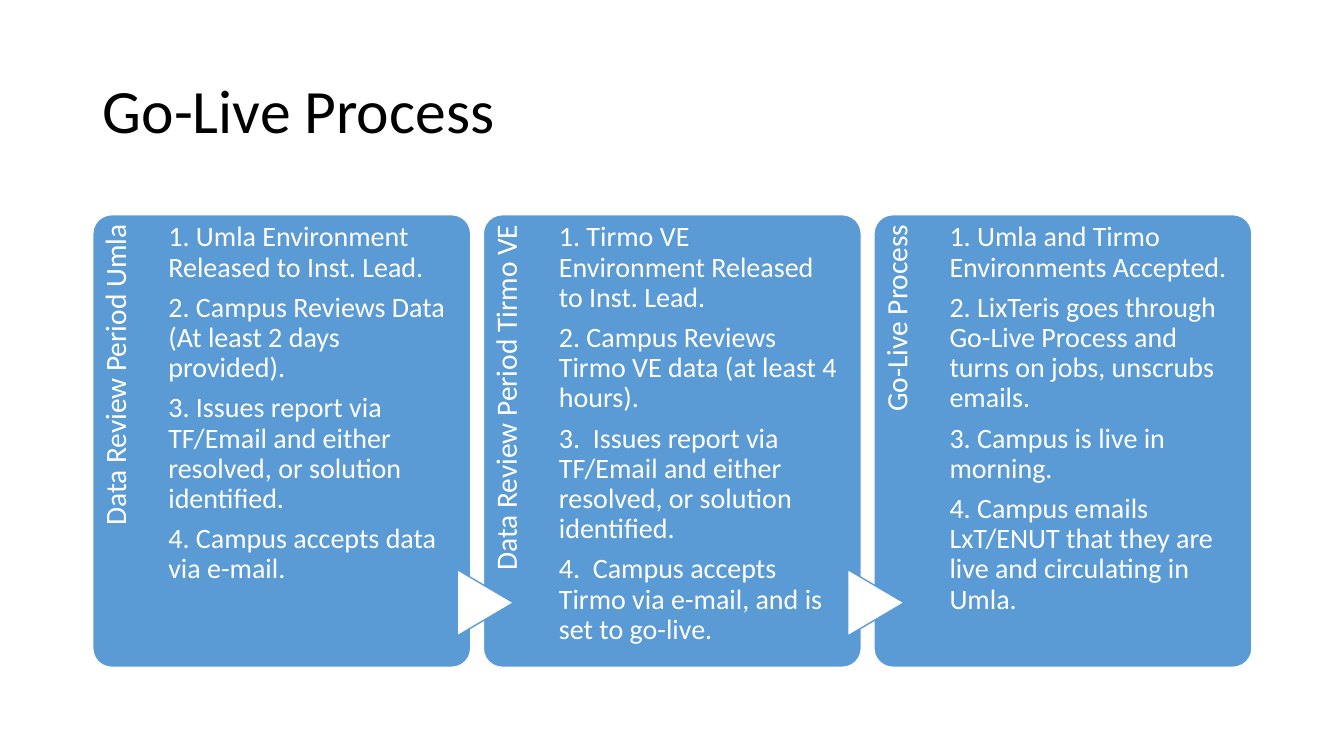
from pptx import Presentation
from pptx.dml.color import RGBColor
from pptx.enum.shapes import MSO_SHAPE
from pptx.enum.text import MSO_ANCHOR, MSO_AUTO_SIZE, PP_ALIGN
from pptx.util import Inches, Pt

COLORS = {"panel": "5B9BD5", "light": "FFFFFF", "title": "000000"}
FONT = "Calibri"
PANEL_LEFT, PANEL_TOP = 0.92, 2.13
PANEL_WIDTH, PANEL_HEIGHT = 3.75, 4.49
PANEL_PITCH = 3.875
STRIP_WIDTH, HEADING_LENGTH = 0.75, 3.69
STEPS_WIDTH = 2.79
ARROW_WIDTH, ARROW_HEIGHT = 0.66, 0.56
ARROW_OFFSET_X, ARROW_OFFSET_Y = -0.31, 3.57

STAGES = [
    ("Data Review Period Umla", [
        "1. Umla Environment Released to Inst. Lead.",
        "2. Campus Reviews Data (At least 2 days provided).",
        "3. Issues report via TF/Email and either resolved, or solution identified.",
        "4. Campus accepts data via e-mail.",
    ]),
    ("Data Review Period Tirmo VE", [
        "1. Tirmo VE Environment Released to Inst. Lead.",
        "2. Campus Reviews Tirmo VE data (at least 4 hours).",
        "3.  Issues report via TF/Email and either resolved, or solution identified.",
        "4.  Campus accepts Tirmo via e-mail, and is set to go-live.",
    ]),
    ("Go-Live Process", [
        "1. Umla and Tirmo Environments Accepted.",
        "2. LixTeris goes through Go-Live Process and turns on jobs, unscrubs emails.",
        "3. Campus is live in morning.",
        "4. Campus emails LxT/ENUT that they are live and circulating in Umla.",
    ]),
]


def apply_format(target, values):
    for name, value in values.items():
        setattr(target, name, value)


def write_paragraphs(frame, lines, size, color, frame_format, paragraph_format):
    apply_format(frame, {"word_wrap": True, "auto_size": MSO_AUTO_SIZE.NONE,
                         **frame_format})
    for index, line in enumerate(lines):
        paragraph = frame.add_paragraph() if index else frame.paragraphs[0]
        apply_format(paragraph, {"line_spacing": 0.9, "alignment": PP_ALIGN.LEFT,
                                 **paragraph_format})
        run = paragraph.add_run()
        run.text = line
        apply_format(run.font, {"name": FONT, "size": Pt(size)})
        run.font.color.rgb = RGBColor.from_string(COLORS[color])


def add_filled(slide, preset, box, fill, line):
    filled = slide.shapes.add_shape(preset, *map(Inches, box))
    filled.shadow.inherit = False
    filled.fill.solid()
    filled.fill.fore_color.rgb = RGBColor.from_string(COLORS[fill])
    filled.line.color.rgb = RGBColor.from_string(COLORS[line])
    filled.line.width = Pt(1)
    return filled


def add_title(slide, box):
    title = slide.shapes.title
    apply_format(title, dict(zip(("left", "top", "width", "height"), map(Inches, box))))
    write_paragraphs(title.text_frame, ["Go-Live Process"], 44, "title",
                     {"vertical_anchor": MSO_ANCHOR.MIDDLE}, {})


def add_heading(slide, box, wording):
    left, top, width, length = box
    heading = slide.shapes.add_textbox(
        Inches(left + (width - length) / 2), Inches(top + (length - width) / 2),
        Inches(length), Inches(width))
    heading.rotation = 270
    write_paragraphs(heading.text_frame, [wording], 21, "light",
                     {"margin_left": 0, "margin_top": Inches(0.08),
                      "margin_right": Inches(0.1), "margin_bottom": 0},
                     {"alignment": PP_ALIGN.RIGHT})


def add_steps(slide, box, wording):
    steps = slide.shapes.add_textbox(*map(Inches, box))
    write_paragraphs(steps.text_frame, wording, 20, "light",
                     {"margin_left": 0, "margin_top": Inches(0.08),
                      "margin_right": 0, "margin_bottom": 0},
                     {"space_after": Pt(7)})


def add_stage(slide, box, heading, steps, has_arrow):
    left, top, width, height = box
    panel = add_filled(slide, MSO_SHAPE.ROUNDED_RECTANGLE, box, "panel", "light")
    panel.adjustments[0] = 0.05
    add_heading(slide, (left, top, STRIP_WIDTH, HEADING_LENGTH), heading)
    if has_arrow:
        arrow = add_filled(slide, MSO_SHAPE.FLOWCHART_EXTRACT,
                           (left + ARROW_OFFSET_X, top + ARROW_OFFSET_Y,
                            ARROW_WIDTH, ARROW_HEIGHT), "light", "panel")
        arrow.rotation = 90
    add_steps(slide, (left + STRIP_WIDTH, top, STEPS_WIDTH, height), steps)


def main():
    presentation = Presentation()
    apply_format(presentation, {"slide_width": Inches(40 / 3),
                                "slide_height": Inches(7.5)})
    slide = presentation.slides.add_slide(presentation.slide_layouts[5])
    add_title(slide, (0.92, 0.4, 11.5, 1.45))
    for index, (heading, steps) in enumerate(STAGES):
        box = (PANEL_LEFT + index * PANEL_PITCH, PANEL_TOP, PANEL_WIDTH, PANEL_HEIGHT)
        add_stage(slide, box, heading, steps, index > 0)
    presentation.save("out.pptx")


if __name__ == "__main__":
    main()
